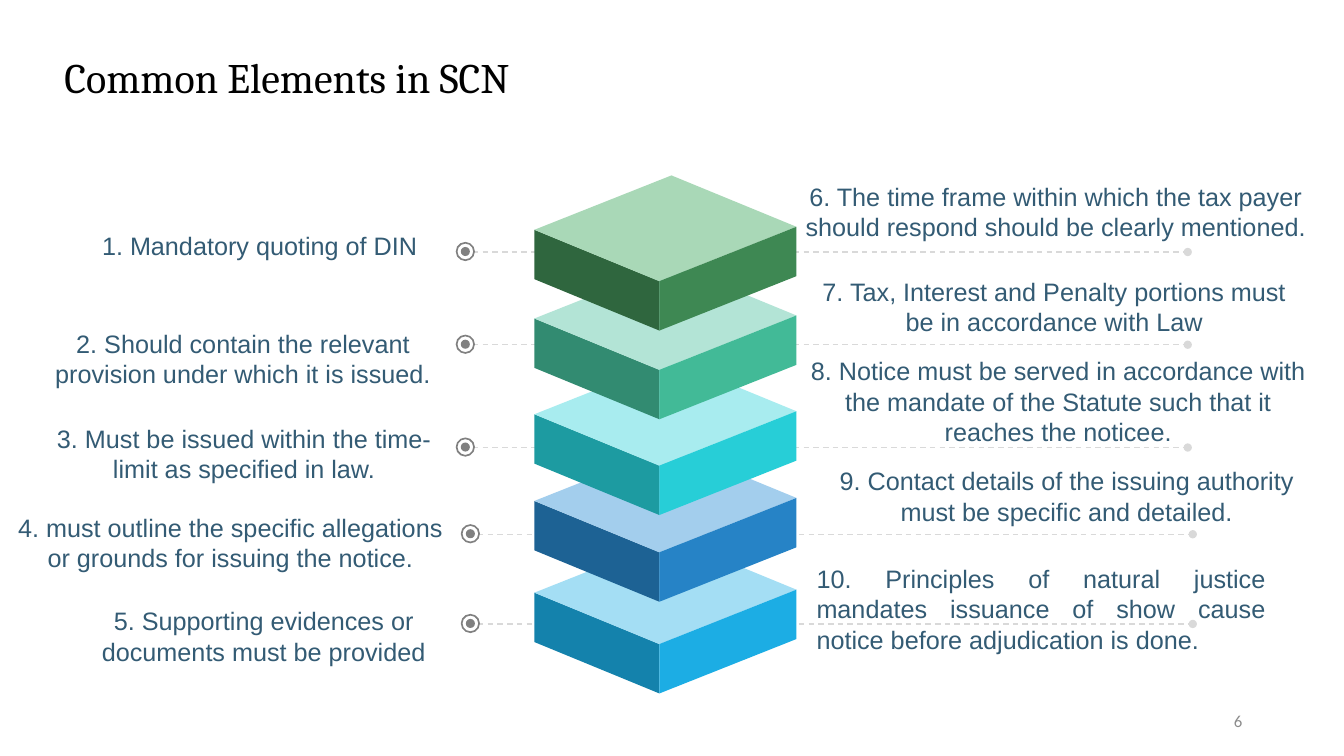
from dataclasses import dataclass

from lxml.etree import SubElement
from pptx import Presentation
from pptx.dml.color import RGBColor as RGB
from pptx.enum.dml import MSO_LINE_DASH_STYLE as DASH
from pptx.enum.shapes import MSO_CONNECTOR as CONN, MSO_SHAPE as SHAPE
from pptx.enum.text import MSO_ANCHOR as ANCHOR, PP_ALIGN as ALIGN
from pptx.oxml.ns import qn
from pptx.util import Pt

PX = 9144


@dataclass(frozen=True)
class Theme:
    title: tuple = ("Cambria", 30, "000000")
    body: tuple = ("Arial", 18, "335B74")
    number: tuple = ("Calibri", 12, "8C8C8C")
    marker: str = "808080"
    guide: str = "D9D9D9"
    blocks: tuple = (
        ("1482AC", "A4DEF4", "1CADE4"),
        ("1D6294", "A3CEED", "2683C6"),
        ("1D9BA1", "A8ECEF", "27CED7"),
        ("328B71", "B3E4D6", "42BA97"),
        ("2F663E", "A9D8B7", "3E8853"),
    )


class SlideBuilder:
    """Draws the elements of one slide in one theme."""

    def __init__(self, slide, theme):
        self.s, self.theme = slide, theme

    def group(self):
        return self.s.shapes.add_group_shape().shapes

    def paint(self, sp, color):
        sp.shadow.inherit = False
        sp.fill.solid()
        sp.fill.fore_color.rgb = RGB.from_string(color)
        sp.line.fill.background()

    def text(self, box, text, style, align=ALIGN.LEFT, anchor=ANCHOR.TOP):
        tf = self.s.shapes.add_textbox(*(v * PX for v in box)).text_frame
        tf.word_wrap, tf.vertical_anchor = True, anchor
        p = tf.paragraphs[0]
        p.alignment = align
        r = p.add_run()
        r.text = text
        name, size, color = style
        for key, value in {"name": name, "size": Pt(size)}.items():
            setattr(r.font, key, value)
        r.font.color.rgb = RGB.from_string(color)

    def guide(self, shapes, x1, x2, y):
        c = shapes.add_connector(CONN.STRAIGHT, x1 * PX, y * PX, x2 * PX, y * PX)
        c.line.color.rgb = RGB.from_string(self.theme.guide)
        for key, value in {"width": Pt(1), "dash_style": DASH.DASH}.items():
            setattr(c.line, key, value)
        spPr = c._element.spPr
        SubElement(spPr.find(qn("a:ln")), qn("a:tailEnd"), type="oval")
        SubElement(spPr, qn("a:effectLst"))

    def marker(self, x, y):
        shapes = self.group()
        self.guide(shapes, x + 8, x + 717, y)
        for kind, size in ((SHAPE.OVAL, 9), (SHAPE.DONUT, 19)):
            corner = size // 2 + 1
            sp = shapes.add_shape(
                kind, (x - corner + 1) * PX, (y - corner) * PX, size * PX, size * PX
            )
            if kind == SHAPE.DONUT:
                sp.adjustments[0] = 0.09
            self.paint(sp, self.theme.marker)

    def face(self, shapes, points, color):
        fb = shapes.build_freeform(*points[0], scale=PX)
        fb.add_line_segments(points[1:], close=True)
        self.paint(fb.convert_to_shape(), color)

    def block(self, shapes, top, colors, depth=49):
        back, left = (666, top), (530, top + 54)
        front, right = (654, top + 105), (790, top + 51)
        low_left, low_front, low_right = (
            (x, y + depth) for x, y in (left, front, right)
        )
        faces = (
            (low_front, low_left, left, front),
            (front, left, back, right),
            (right, low_right, low_front, front),
        )
        for points, color in zip(faces, colors):
            self.face(shapes, points, color)


MARKERS = ((461, 250), (461, 342), (461, 444), (466, 530), (466, 619))
BLOCK_TOPS = (534, 443, 357, 262, 174)
ITEMS = (
    ((65, 224, 385, 64), "Mandatory quoting of DIN"),
    ((33, 321, 416, 64), "Should contain the relevant provision under which it is issued."),
    ((34, 415, 416, 64), "Must be issued within the time-limit as specified in law."),
    ((0, 503, 457, 64), "must outline the specific allegations or grounds for issuing the notice."),
    ((69, 596, 385, 64), "Supporting evidences or documents must be provided"),
    ((778, 175, 538, 122), "The time frame within which the tax payer should respond should be clearly mentioned."),
    ((790, 269, 511, 64), "Tax, Interest and Penalty portions must be in accordance with Law"),
    ((785, 348, 529, 64), "Notice must be served in accordance with the mandate of the Statute such that it reaches the noticee."),
    ((800, 457, 516, 64), "Contact details of the issuing authority must be specific and detailed."),
    ((800, 554, 465, 101), "Principles of natural justice mandates issuance of show cause notice before adjudication is done."),
)


def main():
    prs = Presentation()
    prs.slide_width, prs.slide_height = 1333 * PX, 750 * PX
    theme = Theme()
    b = SlideBuilder(prs.slides.add_slide(prs.slide_layouts[6]), theme)
    b.text((54, 46, 1188, 61), "Common Elements in SCN", theme.title)
    b.text((942, 695, 300, 40), "6", theme.number, ALIGN.RIGHT, ANCHOR.MIDDLE)
    for x, y in MARKERS:
        b.marker(x, y)
    stack = b.group()
    for top, colors in zip(BLOCK_TOPS, theme.blocks):
        b.block(stack, top, colors)
    for n, (box, text) in enumerate(ITEMS, 1):
        align = ALIGN.JUSTIFY if n == len(ITEMS) else ALIGN.CENTER
        b.text(box, f"{n}. {text}", theme.body, align)
    prs.save("out.pptx")


if __name__ == "__main__":
    main()
